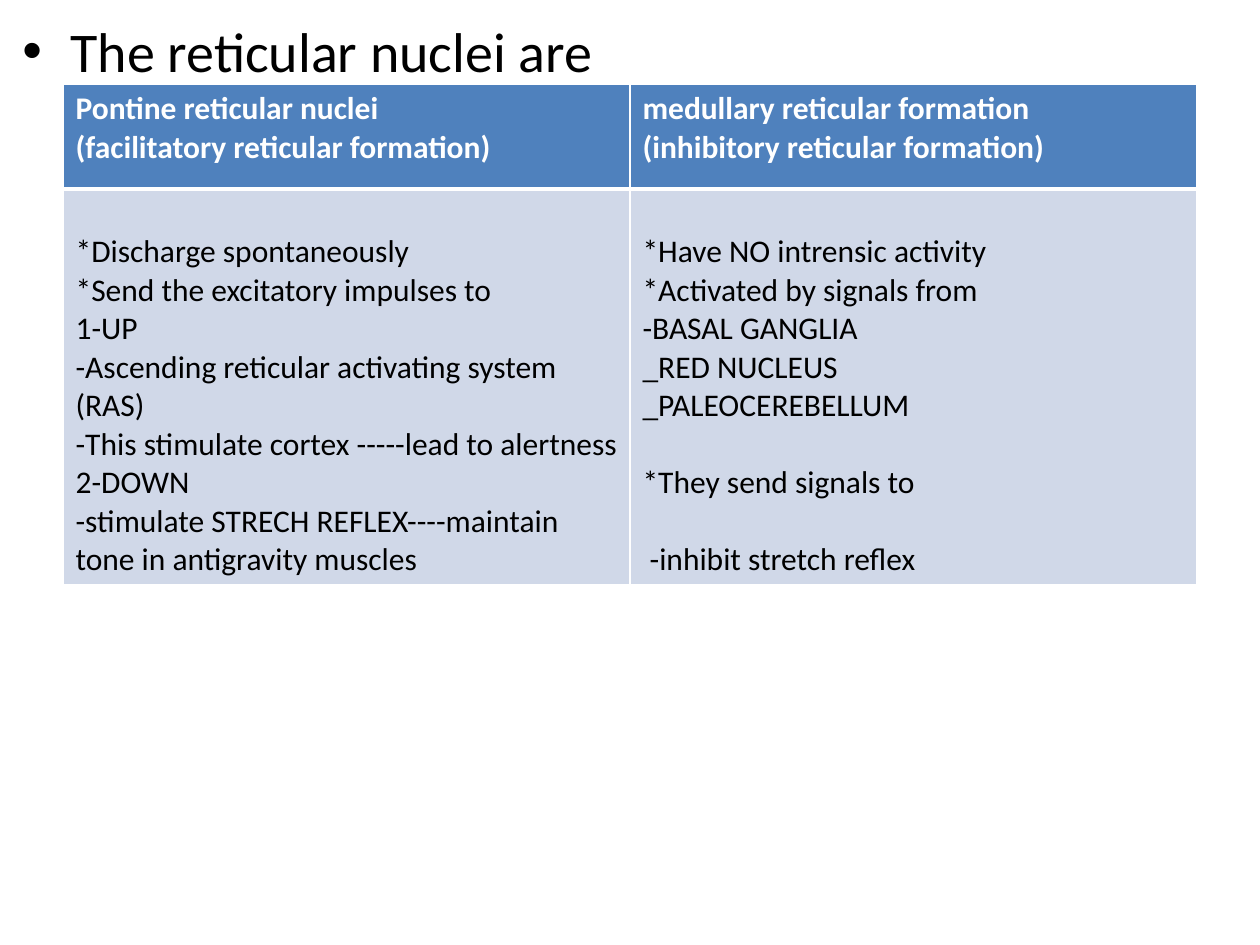
"""Build a slide comparing the pontine and medullary reticular nuclei."""
import lxml.etree
import pptx
import pptx.dml.color
import pptx.enum.text
import pptx.oxml
import pptx.oxml.ns
import pptx.util

PX = 914400 // 126
COLORS = {"text": "000000", "header": "4F81BD", "body": "D0D8E8", "white": "FFFFFF"}
COLUMNS = [
    (
        ["Pontine reticular nuclei", "(facilitatory reticular formation)"],
        [
            "*Discharge spontaneously",
            "*Send the excitatory impulses to",
            "1-UP",
            "-Ascending reticular activating system (RAS)",
            "-This stimulate cortex -----lead to alertness",
            "2-DOWN",
            "-stimulate STRECH REFLEX----maintain tone in antigravity muscles",
        ],
    ),
    (
        ["medullary reticular formation", "(inhibitory reticular formation)"],
        [
            "*Have NO intrensic activity",
            "*Activated by signals from",
            "-BASAL GANGLIA\v_RED NUCLEUS\v_PALEOCEREBELLUM",
            "*They send signals to",
            " -inhibit stretch reflex",
        ],
    ),
]
SPACED_LINES = ("*They send signals to", " -inhibit stretch reflex")


def format_text(paragraph, size, color, bold=False):
    for run in paragraph.runs:
        run.font.name = "Calibri"
        run.font.size = pptx.util.Pt(size)
        run.font.bold = bold
        run.font.color.rgb = pptx.dml.color.RGBColor.from_string(COLORS[color])


def add_borders(cell, widths):
    properties = cell._tc.get_or_add_tcPr()
    for position, (side, width) in enumerate(widths.items()):
        border = pptx.oxml.parse_xml(
            f'<a:ln{side} xmlns:a="http://schemas.openxmlformats.org/drawingml/2006/main" '
            f'w="{pptx.util.Pt(width)}"><a:solidFill><a:srgbClr val="{COLORS["white"]}"/>'
            f"</a:solidFill></a:ln{side}>"
        )
        properties.insert(position, border)


deck = pptx.Presentation()
deck.slide_width = 1260 * PX
deck.slide_height = 945 * PX
slide = deck.slides.add_slide(deck.slide_layouts[6])

heading = slide.shapes.add_textbox(10 * PX, 10 * PX, 1239 * PX, 924 * PX).text_frame
heading.word_wrap = True
heading.text = "The reticular nuclei are"
title = heading.paragraphs[0]
format_text(title, 32, "text")
title_properties = title._p.get_or_add_pPr()
title_properties.set("marL", str(48 * PX))
title_properties.set("indent", str(-48 * PX))
bullet_font = lxml.etree.SubElement(title_properties, pptx.oxml.ns.qn("a:buFont"))
bullet_font.set("typeface", "Arial")
bullet = lxml.etree.SubElement(title_properties, pptx.oxml.ns.qn("a:buChar"))
bullet.set("char", "•")

nuclei = slide.shapes.add_table(2, 2, 63 * PX, 84 * PX, 1134 * PX, 501 * PX).table
nuclei.rows[0].height = 105 * PX
nuclei.rows[1].height = 396 * PX

for column, sections in enumerate(COLUMNS):
    nuclei.columns[column].width = 567 * PX
    for row, lines in enumerate(sections):
        is_header = row == 0
        cell = nuclei.cell(row, column)
        cell.text_frame.text = "\n".join(lines)
        cell.margin_top = (6 if is_header else 44) * PX
        cell.fill.solid()
        cell.fill.fore_color.rgb = pptx.dml.color.RGBColor.from_string(
            COLORS["header" if is_header else "body"]
        )
        add_borders(cell, {"L": 1, "R": 1, "T": 1 if is_header else 3, "B": 3 if is_header else 1})
        for paragraph in cell.text_frame.paragraphs:
            format_text(paragraph, 18, "white" if is_header else "text", is_header)
            if paragraph.text in SPACED_LINES:
                paragraph.space_before = pptx.util.Pt(22)

deck.save("out.pptx")
